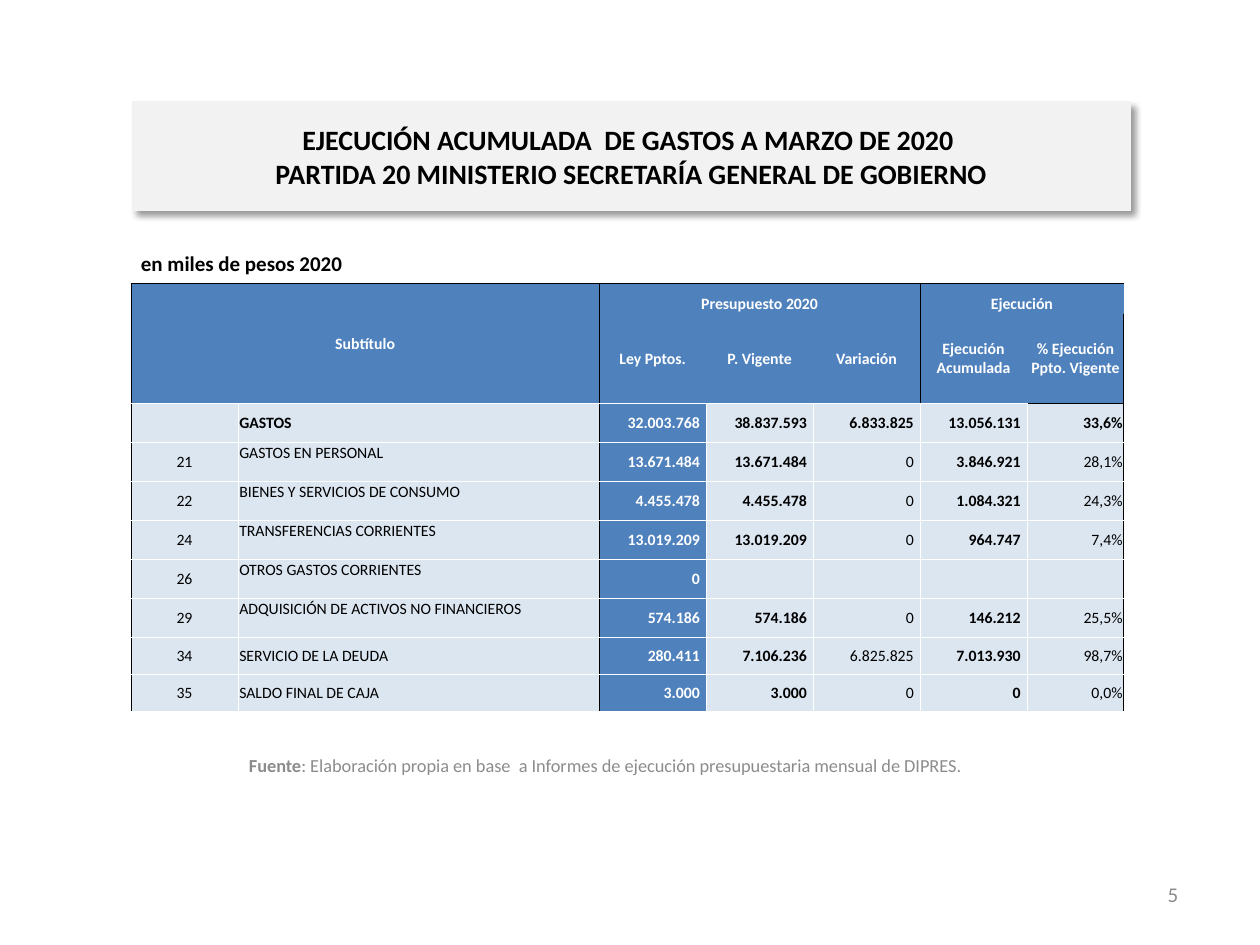
from lxml import etree
from pptx import Presentation
from pptx.dml.color import RGBColor
from pptx.enum.shapes import MSO_SHAPE
from pptx.enum.text import MSO_ANCHOR, PP_ALIGN
from pptx.oxml import parse_xml
from pptx.oxml.ns import nsdecls, qn
from pptx.util import Inches, Pt

LEFT, CENTER, RIGHT, JUSTIFY = PP_ALIGN.LEFT, PP_ALIGN.CENTER, PP_ALIGN.RIGHT, PP_ALIGN.JUSTIFY
TOP, MIDDLE, BOTTOM = MSO_ANCHOR.TOP, MSO_ANCHOR.MIDDLE, MSO_ANCHOR.BOTTOM
RECTANGLE = MSO_SHAPE.RECTANGLE

SLIDE_WIDTH, SLIDE_HEIGHT = Inches(10), Inches(7.5)
FONT = "Calibri"
BLACK, WHITE, GREY, PANEL = "000000", "FFFFFF", "8C8C8C", "F2F2F2"
BLUE, PALE = "4F81BD", "DCE6F1"

COLUMN_WEIGHTS = [0.85, 2.87] + [0.85] * 4 + [0.77]
ROW_WEIGHTS = [0.24, 0.71] + [0.31] * 6 + [0.29] * 2
HEADER_ROWS = 2
LAW_COLUMN = 2
BOLD_COLUMNS = (2, 3, 5)
MERGES = [((0, 0), (1, 1)), ((0, 2), (0, 4)), ((0, 5), (0, 6))]
ROWS = [
    ["Subtítulo", "", "Presupuesto 2020", "", "", "Ejecución", ""],
    ["", "", "Ley Pptos.", "P. Vigente", "Variación", "Ejecución Acumulada", "% Ejecución Ppto. Vigente"],
    ["", "GASTOS", "32.003.768", "38.837.593", "6.833.825", "13.056.131", "33,6%"],
    ["21", "GASTOS EN PERSONAL", "13.671.484", "13.671.484", "0", "3.846.921", "28,1%"],
    ["22", "BIENES Y SERVICIOS DE CONSUMO", "4.455.478", "4.455.478", "0", "1.084.321", "24,3%"],
    ["24", "TRANSFERENCIAS CORRIENTES", "13.019.209", "13.019.209", "0", "964.747", "7,4%"],
    ["26", "OTROS GASTOS CORRIENTES", "0", "", "", "", ""],
    ["29", "ADQUISICIÓN DE ACTIVOS NO FINANCIEROS", "574.186", "574.186", "0", "146.212", "25,5%"],
    ["34", "SERVICIO DE LA DEUDA", "280.411", "7.106.236", "6.825.825", "7.013.930", "98,7%"],
    ["35", "SALDO FINAL DE CAJA", "3.000", "3.000", "0", "0", "0,0%"],
]


def color(value):
    """Turn a hex string into a colour."""
    return RGBColor.from_string(value)


def place(left, top, width, height):
    """Turn percentages of the slide into a box."""
    return (int(SLIDE_WIDTH * left / 100), int(SLIDE_HEIGHT * top / 100),
            int(SLIDE_WIDTH * width / 100), int(SLIDE_HEIGHT * height / 100))


def format_run(run, size, value, bold=False):
    """Set the font of one run."""
    run.font.name, run.font.size, run.font.bold = FONT, Pt(size), bold
    run.font.color.rgb = color(value)


def add_title(slide, box, text):
    """Add the shaded title panel."""
    shape = slide.shapes.add_shape(RECTANGLE, *box)
    shape.shadow.inherit = False
    shape.fill.solid()
    shape.fill.fore_color.rgb = color(PANEL)
    shape.line.color.rgb = color(PANEL)
    shape.line.width = Pt(0.75)
    effects = shape._element.spPr.find(qn("a:effectLst"))
    effects.append(parse_xml(
        f'<a:outerShdw {nsdecls("a")} blurRad="{Pt(4)}" dist="{Pt(3)}" dir="2700000" algn="tl" '
        f'rotWithShape="0"><a:srgbClr val="{BLACK}"><a:alpha val="40000"/></a:srgbClr></a:outerShdw>'))
    shape.text_frame.text = text
    shape.text_frame.word_wrap = True
    shape.text_frame.vertical_anchor = MIDDLE
    paragraph = shape.text_frame.paragraphs[0]
    paragraph.alignment = CENTER
    for run in paragraph.runs:
        format_run(run, 16, BLACK, True)


def add_text(slide, box, parts, size, value, alignment, anchor):
    """Add one line of text made of (text, bold) parts."""
    text_frame = slide.shapes.add_textbox(*box).text_frame
    text_frame.word_wrap = True
    text_frame.vertical_anchor = anchor
    paragraph = text_frame.paragraphs[0]
    paragraph.alignment = alignment
    for text, bold in parts:
        run = paragraph.add_run()
        run.text = text
        format_run(run, size, value, bold)


def vertical_line(row, edge):
    """Give the colour of a column edge in a row."""
    if edge in (0, 2, len(COLUMN_WEIGHTS)) or (edge == 5 and row < HEADER_ROWS):
        return BLACK
    return WHITE if row >= HEADER_ROWS else None


def horizontal_line(edge, column):
    """Give the colour of a row edge in a column."""
    if edge == 0 or (edge == HEADER_ROWS and column == len(COLUMN_WEIGHTS) - 1):
        return BLACK
    return WHITE if HEADER_ROWS <= edge < len(ROW_WEIGHTS) else None


def set_borders(cell, row, column):
    """Draw the four borders of a cell."""
    borders = {"lnL": vertical_line(row, column), "lnR": vertical_line(row, column + 1),
               "lnT": horizontal_line(row, column), "lnB": horizontal_line(row + 1, column)}
    properties = cell._tc.get_or_add_tcPr()
    for tag, value in borders.items():
        line = etree.SubElement(properties, qn(f"a:{tag}"), w=str(Pt(0.5)))
        if value:
            fill = etree.SubElement(line, qn("a:solidFill"))
            etree.SubElement(fill, qn("a:srgbClr"), val=value)
        else:
            etree.SubElement(line, qn("a:noFill"))


def format_cell(cell, row, column, text):
    """Fill, align and write one cell."""
    header = row < HEADER_ROWS
    dark = header or column == LAW_COLUMN
    set_borders(cell, row, column)
    cell.fill.solid()
    cell.fill.fore_color.rgb = color(BLUE if dark else PALE)
    amount = not header and 2 <= column <= 5
    cell.margin_left = cell.margin_top = Inches(0.01)
    cell.margin_right, cell.margin_bottom = Inches(0.05 if amount else 0.01), 0
    cell.vertical_anchor = MIDDLE
    if row == 0 and column > 0:
        cell.vertical_anchor = BOTTOM
    elif column == 1 and 3 <= row <= 7:
        cell.vertical_anchor = TOP
    if not text:
        return
    cell.text_frame.text = text
    paragraph = cell.text_frame.paragraphs[0]
    paragraph.alignment = CENTER if header or column == 0 else JUSTIFY if column == 1 else RIGHT
    bold = row <= HEADER_ROWS or column in BOLD_COLUMNS
    format_run(paragraph.runs[0], 9, WHITE if dark else BLACK, bold)


def add_budget_table(slide, box):
    """Add the budget table, its columns and rows sharing the box."""
    left, top, width, height = box
    table = slide.shapes.add_table(len(ROW_WEIGHTS), len(COLUMN_WEIGHTS), *box).table
    table.first_row = table.horz_banding = False
    for column, weight in zip(table.columns, COLUMN_WEIGHTS):
        column.width = int(width * weight / sum(COLUMN_WEIGHTS))
    for row, weight in zip(table.rows, ROW_WEIGHTS):
        row.height = int(height * weight / sum(ROW_WEIGHTS))
    for first, last in MERGES:
        table.cell(*first).merge(table.cell(*last))
    for row, values in enumerate(ROWS):
        for column, text in enumerate(values):
            format_cell(table.cell(row, column), row, column, text)


def main():
    """Build and save the slide."""
    presentation = Presentation()
    presentation.slide_width, presentation.slide_height = SLIDE_WIDTH, SLIDE_HEIGHT
    slide = presentation.slides.add_slide(presentation.slide_layouts[6])
    add_title(slide, place(10.5, 10.8, 79.2, 11.5),
              "EJECUCIÓN ACUMULADA  DE GASTOS A MARZO DE 2020 \v"
              "PARTIDA 20 MINISTERIO SECRETARÍA GENERAL DE GOBIERNO")
    source = [("Fuente", True), (": Elaboración propia en base  a Informes de ejecución "
                                 "presupuestaria mensual de DIPRES.", False)]
    add_text(slide, place(8.7, 78.27, 78.7, 5.33), source, 10.5, GREY, CENTER, MIDDLE)
    add_text(slide, place(71.2, 92, 23.3, 5.33), [("5", False)], 12, GREY, RIGHT, MIDDLE)
    add_text(slide, place(10.2, 25.87, 79.2, 4.13), [("en miles de pesos 2020", True)],
             12, BLACK, LEFT, TOP)
    add_budget_table(slide, place(10.4, 30, 78.8, 45.2))
    presentation.save("out.pptx")


if __name__ == "__main__":
    main()
